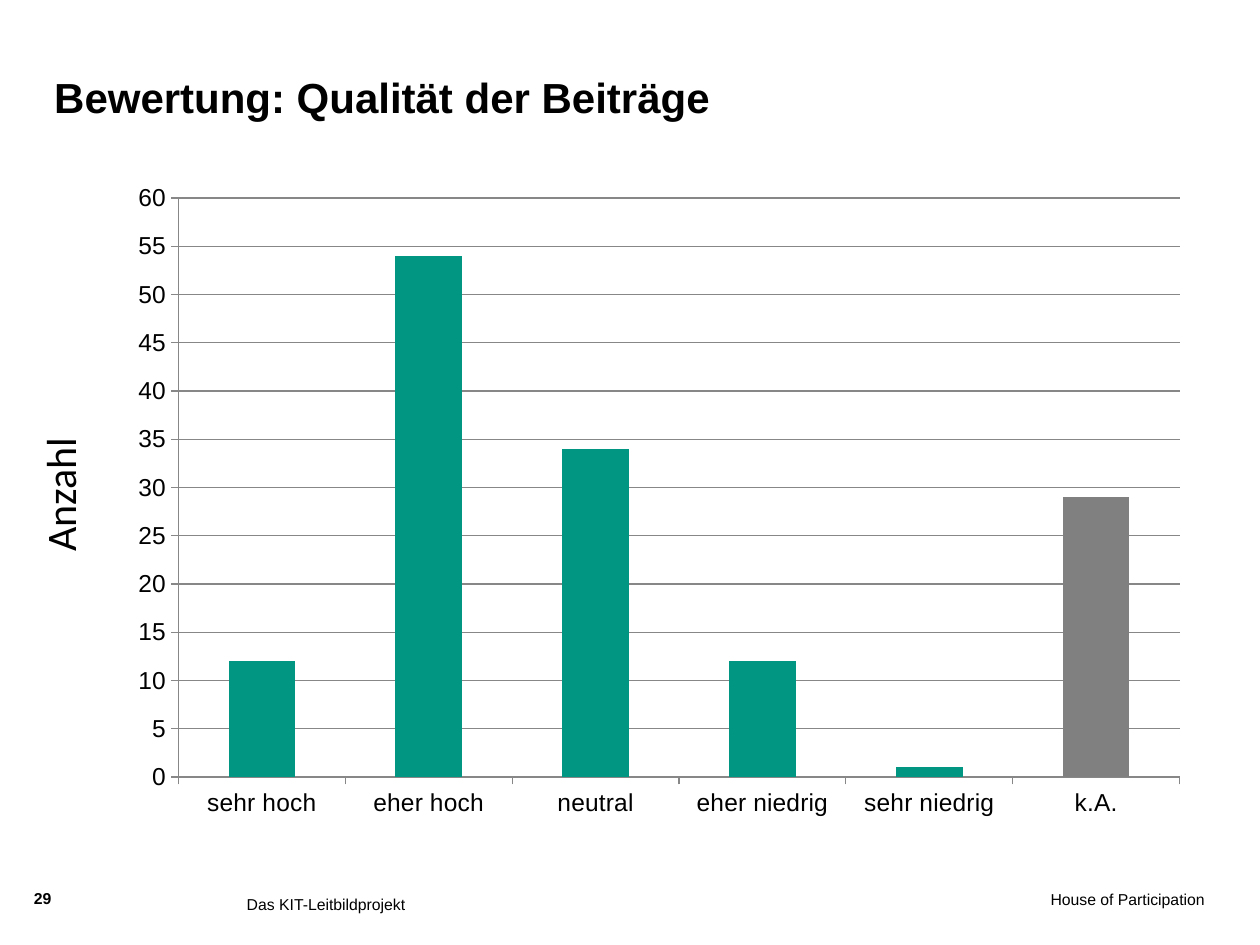
from dataclasses import dataclass

from lxml import etree
from pptx import Presentation
from pptx.chart.data import CategoryChartData
from pptx.dml.color import RGBColor
from pptx.enum.chart import XL_CHART_TYPE, XL_TICK_MARK
from pptx.enum.text import MSO_ANCHOR, PP_ALIGN
from pptx.oxml.ns import qn
from pptx.util import Emu, Pt

PX = 9144  # 100 px to the inch
LEFT, RIGHT = PP_ALIGN.LEFT, PP_ALIGN.RIGHT
TOP, BOTTOM = MSO_ANCHOR.TOP, MSO_ANCHOR.BOTTOM
COLUMNS = XL_CHART_TYPE.COLUMN_CLUSTERED
TICK_OUTSIDE = XL_TICK_MARK.OUTSIDE

BLACK, GREEN, GREY, AXIS_GREY = "000000", "009682", "808080", "878787"
RATINGS = {
    "sehr hoch": 12,
    "eher hoch": 54,
    "neutral": 34,
    "eher niedrig": 12,
    "sehr niedrig": 1,
    "k.A.": 29,
}
PLOT_AREA = {"x": 0.059, "y": 0.034, "w": 0.925, "h": 0.859}


@dataclass(frozen=True)
class Label:
    text: str
    box: tuple[int, int, int, int]
    size: int = 9
    font: str = "Arial"
    bold: bool = False
    align: PP_ALIGN = LEFT
    anchor: MSO_ANCHOR = TOP
    inset: tuple[int, int] = (0, 0)
    rotation: int = 0


TITLE = Label("Bewertung: Qualität der Beiträge", (43, 36, 756, 61), 24,
              bold=True, anchor=BOTTOM)
LABELS = (
    Label("House of Participation", (657, 706, 299, 39), align=RIGHT),
    Label("29", (27, 705, 36, 24), bold=True),
    Label("Das KIT-Leitbildprojekt", (186, 705, 465, 39), inset=(10, 5)),
    Label("Anzahl", (-24, 324, 165, 63), 24, "Calibri", rotation=270),
)


def px(*lengths: int) -> list[Emu]:
    return [Emu(length * PX) for length in lengths]


def color(value: str) -> RGBColor:
    return RGBColor.from_string(value)


def set_font(font, size: int, name: str = "Arial", bold: bool = False) -> None:
    font.name, font.size, font.bold = name, Pt(size), bold
    font.color.rgb = color(BLACK)


def format_label(shape, label: Label) -> None:
    shape.left, shape.top, shape.width, shape.height = px(*label.box)
    shape.rotation = label.rotation
    frame = shape.text_frame
    frame.word_wrap = True
    frame.vertical_anchor = label.anchor
    horizontal, vertical = px(*label.inset)
    frame.margin_left = frame.margin_right = horizontal
    frame.margin_top = frame.margin_bottom = vertical
    frame.text = label.text
    paragraph = frame.paragraphs[0]
    paragraph.alignment = label.align
    set_font(paragraph.font, label.size, label.font, label.bold)


def set_plot_area(chart) -> None:
    """Fix the inner plot area as fractions of the chart."""
    plot_area = chart.element.find(".//" + qn("c:plotArea"))
    for old_layout in plot_area.findall(qn("c:layout")):
        plot_area.remove(old_layout)
    layout = etree.Element(qn("c:layout"))
    manual = etree.SubElement(layout, qn("c:manualLayout"))
    settings = {"layoutTarget": "inner", "xMode": "edge", "yMode": "edge"}
    for tag, value in (settings | PLOT_AREA).items():
        etree.SubElement(manual, qn(f"c:{tag}")).set("val", str(value))
    plot_area.insert(0, layout)


def format_axis(axis) -> None:
    axis.major_tick_mark = TICK_OUTSIDE
    axis.format.line.color.rgb = color(AXIS_GREY)
    axis.format.line.width = Pt(0.75)
    set_font(axis.tick_labels.font, 14)


def add_rating_chart(slide) -> None:
    data = CategoryChartData()
    data.categories = list(RATINGS)
    data.add_series("Series 1", list(RATINGS.values()))
    chart = slide.shapes.add_chart(COLUMNS, *px(91, 139, 859, 535), data).chart
    chart.has_legend = chart.has_title = False
    set_font(chart.font, 18)
    set_plot_area(chart)

    plot = chart.plots[0]
    plot.gap_width = 150
    plot.vary_by_categories = False
    series = plot.series[0]
    no_answer = series.points[len(RATINGS) - 1]
    for item, fill_color in ((series, GREEN), (no_answer, GREY)):
        item.format.fill.solid()
        item.format.fill.fore_color.rgb = color(fill_color)

    format_axis(chart.category_axis)
    value_axis = chart.value_axis
    format_axis(value_axis)
    value_axis.minimum_scale, value_axis.maximum_scale = 0, 60
    value_axis.major_unit = 5
    value_axis.has_major_gridlines = True
    gridline = value_axis.major_gridlines.format.line
    gridline.color.rgb = color(AXIS_GREY)
    gridline.width = Pt(0.75)


def main() -> None:
    presentation = Presentation()
    presentation.slide_width, presentation.slide_height = px(1000, 750)
    slide = presentation.slides.add_slide(presentation.slide_layouts[5])
    format_label(slide.shapes.title, TITLE)
    add_rating_chart(slide)
    for label in LABELS:
        format_label(slide.shapes.add_textbox(*px(*label.box)), label)
    presentation.save("out.pptx")


if __name__ == "__main__":
    main()
